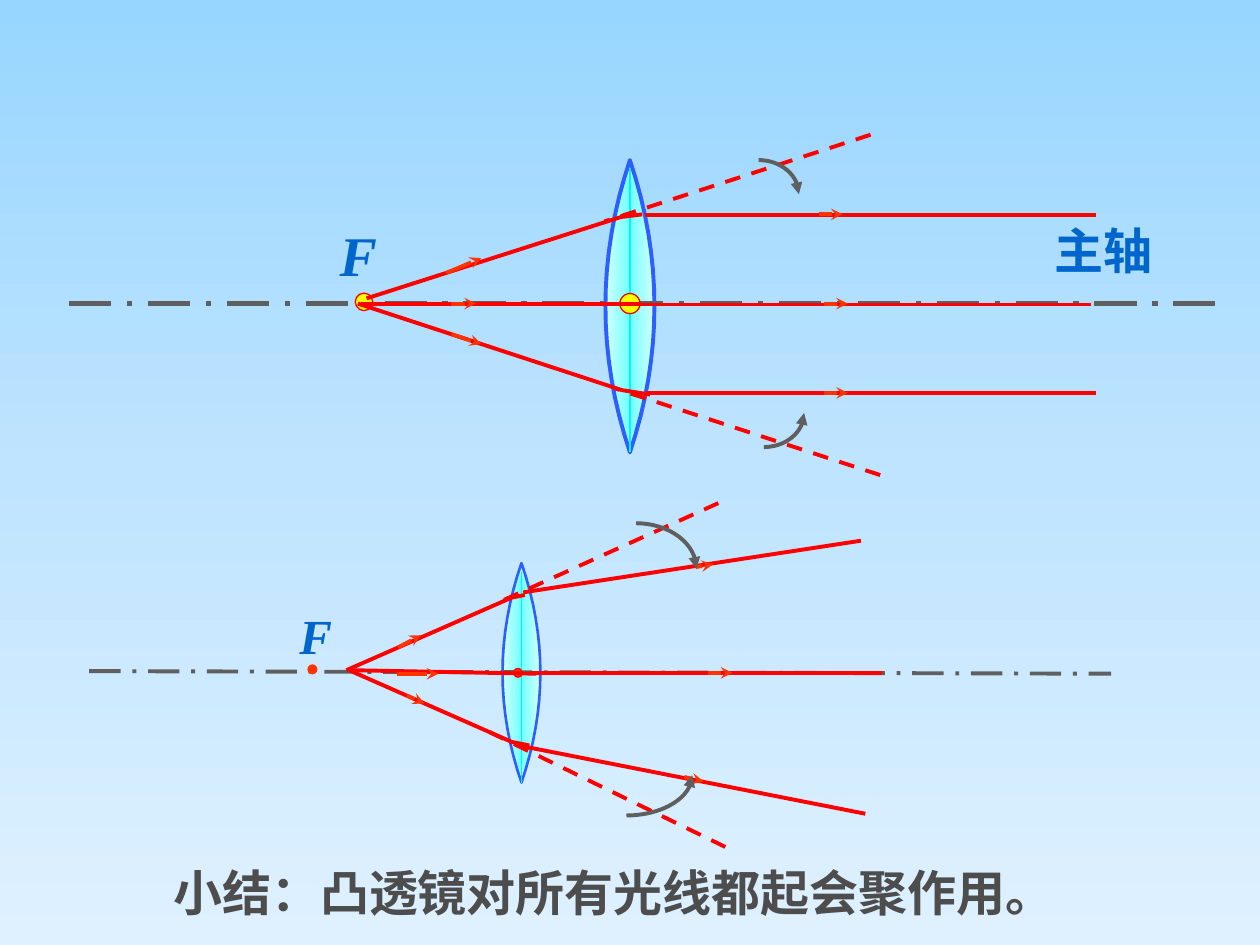
from math import cos, pi, sin

from lxml.etree import SubElement
from pptx import Presentation
from pptx.dml.color import RGBColor
from pptx.enum.dml import MSO_LINE
from pptx.enum.shapes import MSO_CONNECTOR, MSO_SHAPE
from pptx.oxml.ns import qn
from pptx.util import Pt

COLORS = {
    "sky_top": "97D6FF", "sky_middle": "BFE4FF", "sky_bottom": "DFF1FF",
    "glass_center": "71FFFF", "glass_edge": "D5FFFF", "rim": "2D5FFF",
    "lens_line": "00F8F2", "gray": "5F5F5F", "ray": "FF0000",
    "arrow": "FF3300", "yellow": "FFFF00", "label": "0066CC", "summary": "4D4D4D",
}
LATIN, CHINESE = "Times New Roman", "Noto Sans CJK SC"

# Each diagram: lens (center x, center y, half width, half height), dots
# (center x, center y, diameter, fill, outline), labels (text, box, font, size,
# italic), rays (points, arrow start, arrow end), extensions (dashed line
# start, end), turns (arc start, end)
DIAGRAMS = [
    {
        "lens": (360, 175, 14, 83.5), "rim": 2.25,
        "axis": ((39.5, 173.5), (695, 173.5)), "axis_width": 3,
        "dots": [(360, 173.5, 11.5, "yellow", "ray"),
                 (208, 172.5, 10, "yellow", "ray")],
        "labels": [("F", (187, 122.5, 40, 45), LATIN, 32, True),
                   ("主轴", (595.5, 122.5, 99.5, 41), CHINESE, 28, False)],
        "rays": [
            ([(367, 122.5), (355, 124), (209.5, 170.5)], (255, 156), (275, 147.5)),
            ([(371.5, 225.5), (355.5, 223), (204.5, 173.5)], (258, 191), (275, 196.5)),
            ([(366.5, 173.5), (206.5, 173.5)], (258, 173.5), (272, 173.5)),
            ([(626.5, 123), (368.5, 123)], (468, 122.5), (481.5, 122.5)),
            ([(623.5, 174), (366.5, 174)], (471, 173.5), (484.5, 173.5)),
            ([(626.5, 224.5), (368.5, 224.5)], (471, 224.5), (484.5, 224.5)),
        ],
        "extensions": [((497.5, 77), (345.5, 126.5)), ((503, 271.5), (351.5, 222))],
        "turns": [((433.5, 91.5), (456.5, 111)), ((436.5, 255.5), (459.5, 236))],
    },
    {
        "lens": (298, 384.5, 10.8, 62.7), "rim": 1.5,
        "axis": ((51, 383.5), (635, 385)), "axis_width": 2.25,
        "dots": [(296, 384.5, 5, "arrow", "ray"), (178.5, 382.5, 5.75, "arrow", None)],
        "labels": [("F", (164, 342.5, 42, 41), LATIN, 28, True)],
        "rays": [
            ([(300, 340), (292.5, 341.5), (198, 383)], (227.5, 370), (240.5, 363)),
            ([(302.5, 426), (292.5, 424), (199.5, 383)], (232.5, 397.5), (242.5, 402)),
            ([(306.5, 385), (201, 383)], (227, 385), (250.5, 385)),
            ([(492, 309), (299, 338.5)], (397.5, 324), (407.5, 322.5)),
            ([(504, 384.5), (303, 384.5)], (404.5, 384.5), (418.5, 384.5)),
            ([(494.5, 465), (296.5, 426)], (391, 444), (402, 446.5)),
        ],
        "extensions": [((410.5, 287.5), (282, 345.5)), ((414.5, 484), (277, 417))],
        "turns": [((363.5, 299), (398, 325)), ((358, 466), (395.5, 443))],
    },
]
SUMMARY = "小结：凸透镜对所有光线都起会聚作用。"


def rgb(name):
    return RGBColor.from_string(COLORS[name])


def set_gradient(fill, owner, stops):
    """Give a fill its (percent, color) stops and return its XML element."""
    fill.gradient()
    gradient = owner.find(".//" + qn("a:gradFill"))
    stop_list = gradient.find(qn("a:gsLst"))
    stop_list.clear()
    for percent, color in stops:
        stop = SubElement(stop_list, qn("a:gs"), pos=str(percent * 1000))
        SubElement(stop, qn("a:srgbClr"), val=COLORS[color])
    return gradient


def style_line(part, color, width, dash=None, head=None):
    part.line.color.rgb = rgb(color)
    part.line.width = Pt(width)
    if dash:
        part.line.dash_style = dash
    if head:
        SubElement(part.line._get_or_add_ln(), qn("a:tailEnd"), type=head)


def add_line(start, end, color, width=2.25, **style):
    line = slide.shapes.add_connector(
        MSO_CONNECTOR.STRAIGHT, *(Pt(v) for v in (*start, *end)))
    SubElement(line._element.spPr, qn("a:effectLst"))
    style_line(line, color, width, **style)


def add_outline(points, color, width=2.25, close=False, **style):
    first, *rest = [(Pt(x), Pt(y)) for x, y in points]
    builder = slide.shapes.build_freeform(*first)
    builder.add_line_segments(rest, close=close)
    outline = builder.convert_to_shape()
    outline.shadow.inherit = False
    outline.fill.background()
    style_line(outline, color, width, **style)
    return outline


def add_text(text, box, *, font, size, color, italic=False):
    frame = slide.shapes.add_textbox(*(Pt(v) for v in box)).text_frame
    frame.word_wrap = True
    run = frame.paragraphs[0].add_run()
    run.text = text
    run.font.name, run.font.size = font, Pt(size)
    run.font.bold, run.font.italic = True, italic
    run.font.color.rgb = rgb(color)
    SubElement(run.font._element, qn("a:ea"), typeface=font)


def add_lens(x, y, half_width, half_height, rim):
    steps = [i / 8 for i in range(-8, 9)]
    left = [(x - half_width * (1 - t * t), y + half_height * t) for t in steps]
    right = [(2 * x - px, py) for px, py in left[-2:0:-1]]
    lens = add_outline(left + right, "rim", rim, close=True)
    gradient = set_gradient(lens.fill, lens._element,
                            [(0, "glass_center"), (100, "glass_edge")])
    gradient.remove(gradient.find(qn("a:lin")))
    center = SubElement(gradient, qn("a:path"), path="shape")
    SubElement(center, qn("a:fillToRect"), l="50000", t="50000", r="50000", b="50000")
    add_line((x, y - half_height + 5), (x, y + half_height), "lens_line", 1)


def add_dot(x, y, size, fill, outline):
    dot = slide.shapes.add_shape(
        MSO_SHAPE.OVAL, Pt(x - size / 2), Pt(y - size / 2), Pt(size), Pt(size))
    dot.shadow.inherit = False
    dot.fill.solid()
    dot.fill.fore_color.rgb = rgb(fill)
    if outline:
        style_line(dot, outline, 0.75)
    else:
        dot.line.fill.background()


def add_turn(start, end):
    """Quarter ellipse that leaves its start horizontally."""
    (x0, y0), (x1, y1) = start, end
    angles = [i * pi / 32 for i in range(17)]
    points = [(x0 + (x1 - x0) * sin(a), y1 - (y1 - y0) * cos(a)) for a in angles]
    add_outline(points, "gray", head="triangle")


presentation = Presentation()
presentation.slide_width, presentation.slide_height = Pt(720), Pt(540)
slide = presentation.slides.add_slide(presentation.slide_layouts[6])

# Sky background, top to bottom
sky = set_gradient(slide.background.fill, slide._element,
                   [(0, "sky_top"), (50, "sky_middle"), (100, "sky_bottom")])
sky.find(qn("a:lin")).set("ang", "5400000")

for diagram in DIAGRAMS:
    # Lens, principal axis, points and labels
    add_lens(*diagram["lens"], diagram["rim"])
    add_line(*diagram["axis"], "gray", diagram["axis_width"],
             dash=MSO_LINE.LONG_DASH_DOT)
    for dot in diagram["dots"]:
        add_dot(*dot)
    for text, box, font, size, italic in diagram["labels"]:
        add_text(text, box, font=font, size=size, color="label", italic=italic)
    # Rays with direction arrows
    for points, arrow_start, arrow_end in diagram["rays"]:
        if len(points) == 2:
            add_line(*points, "ray")
        else:
            add_outline(points, "ray")
        add_line(arrow_start, arrow_end, "arrow", head="stealth")
    # Undeflected paths and the turn towards the axis
    for extension, turn in zip(diagram["extensions"], diagram["turns"]):
        add_line(*extension, "ray", dash=MSO_LINE.DASH)
        add_turn(*turn)

# Summary
add_text(SUMMARY, (92, 489.5, 520.5, 41), font=CHINESE, size=28, color="summary")

presentation.save("out.pptx")
